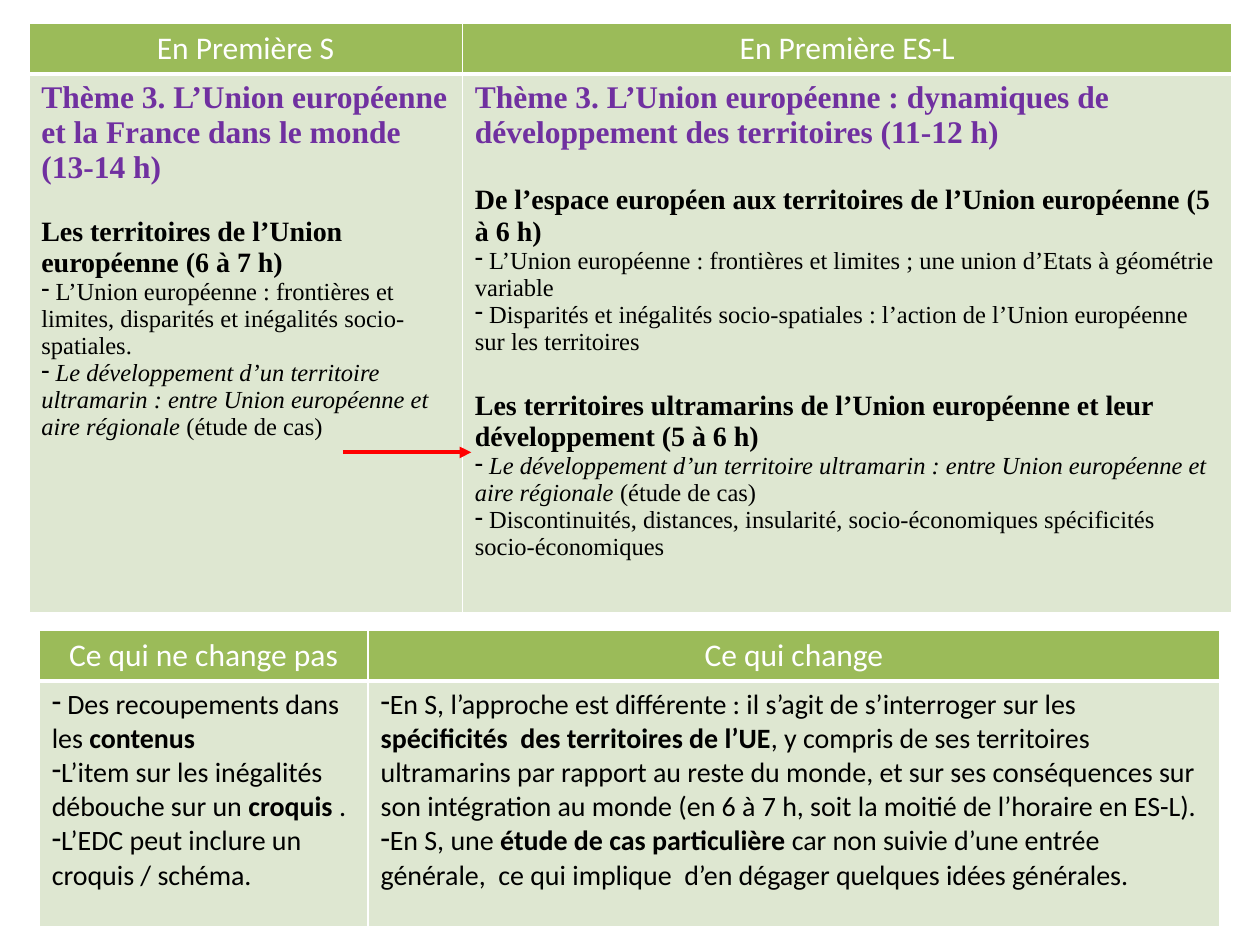
from dataclasses import dataclass

from lxml.etree import SubElement
from pptx import Presentation
from pptx.dml.color import RGBColor
from pptx.enum.shapes import MSO_CONNECTOR as Connector
from pptx.enum.text import PP_ALIGN as Align
from pptx.oxml.ns import qn
from pptx.util import Cm, Pt

SERIF, SANS = "Times New Roman", "Calibri"
WHITE, BLACK, PURPLE, RED = "FFFFFF", "000000", "7030A0", "FF0000"
GREEN, PALE_GREEN = "9BBB59", "DEE7D1"


@dataclass
class Span:
    text: str
    bold: bool = False
    italic: bool = False


@dataclass
class Para:
    spans: list[Span]
    size: int
    font: str = SERIF
    color: str = BLACK
    before: int = 0
    bullet: bool = False
    align: Align = Align.LEFT


@dataclass
class Grid:
    left: float
    top: float
    widths: list[float]
    heights: list[float]
    headers: list[str]
    bodies: list[list[Para]]


def rgb(value: str) -> RGBColor:
    return RGBColor.from_string(value)


def theme(text: str) -> Para:
    return Para([Span(text, bold=True)], 18, color=PURPLE)


def heading(text: str, before: int) -> Para:
    return Para([Span(text, bold=True)], 16, before=before)


def item(*spans: Span) -> Para:
    return Para(list(spans), 14, bullet=True)


def remark(*spans: Span) -> Para:
    return Para(list(spans), 16, font=SANS, bullet=True)


def write(frame, paras: list[Para]) -> None:
    for index, para in enumerate(paras):
        line = frame.add_paragraph() if index else frame.paragraphs[0]
        line.alignment = para.align
        line.space_before = Pt(para.before)
        if para.bullet:
            SubElement(line._p.get_or_add_pPr(), qn("a:buChar"), char="-")
        for span in para.spans:
            run = line.add_run()
            run.text = span.text
            run.font.name, run.font.size = para.font, Pt(para.size)
            run.font.bold, run.font.italic = span.bold, span.italic
            run.font.color.rgb = rgb(para.color)


def add_borders(cell, bottom: int) -> None:
    properties = cell._tc.get_or_add_tcPr()
    for side, width in (("L", 1), ("R", 1), ("T", 1), ("B", bottom)):
        border = SubElement(properties, qn(f"a:ln{side}"), w=str(Pt(width)))
        SubElement(SubElement(border, qn("a:solidFill")), qn("a:srgbClr"), val=WHITE)


def fill_cell(cell, paras: list[Para], fill: str, bottom: int) -> None:
    add_borders(cell, bottom)
    cell.fill.solid()
    cell.fill.fore_color.rgb = rgb(fill)
    write(cell.text_frame, paras)


def draw_grid(slide, grid: Grid) -> None:
    table = slide.shapes.add_table(
        len(grid.heights), len(grid.widths), Cm(grid.left), Cm(grid.top),
        Cm(sum(grid.widths)), Cm(sum(grid.heights))).table
    for column, width in zip(table.columns, grid.widths):
        column.width = Cm(width)
    for row, height in zip(table.rows, grid.heights):
        row.height = Cm(height)
    for index, (header, body) in enumerate(zip(grid.headers, grid.bodies)):
        title = Para([Span(header)], 18, SANS, WHITE, align=Align.CENTER)
        fill_cell(table.cell(0, index), [title], GREEN, bottom=3)
        fill_cell(table.cell(1, index), body, PALE_GREEN, bottom=1)


def draw_arrow(slide, start: float, end: float, y: float) -> None:
    arrow = slide.shapes.add_connector(
        Connector.STRAIGHT, Cm(start), Cm(y), Cm(end), Cm(y))
    arrow.line.color.rgb = rgb(RED)
    arrow.line.width = Pt(2.25)
    SubElement(arrow.line._get_or_add_ln(), qn("a:tailEnd"), type="triangle")
    SubElement(arrow._element.spPr, qn("a:effectLst"))


CASE_STUDY = item(
    Span(" "),
    Span("Le développement d’un territoire ultramarin : entre Union européenne "
         "et aire régionale ", italic=True),
    Span("(étude de cas)"))

PROGRAMMES = Grid(
    0.58, 0.46, [8.74, 15.52], [0.97, 10.87],
    ["En Première S", "En Première ES-L"],
    [[theme("Thème 3. L’Union européenne et la France dans le monde (13-14 h)"),
      heading("Les territoires de l’Union européenne (6 à 7 h)", before=18),
      item(Span(" L’Union européenne : frontières et limites, disparités et "
                "inégalités socio-spatiales.")),
      CASE_STUDY],
     [theme("Thème 3.\u00a0L’Union européenne : dynamiques de développement des "
            "territoires (11-12 h)"),
      heading("De l’espace européen aux territoires de l’Union européenne "
              "(5 à 6 h)", before=20),
      item(Span(" L’Union européenne : frontières et limites ; une union d’Etats "
                "à géométrie variable")),
      item(Span(" Disparités et inégalités socio-spatiales : l’action de l’Union "
                "européenne sur les territoires")),
      heading("Les territoires ultramarins de l’Union européenne et leur "
              "développement (5 à 6 h)", before=20),
      CASE_STUDY,
      item(Span(" Discontinuités, distances, insularité, socio-économiques "
                "spécificités socio-économiques"))]])

CHANGES = Grid(
    0.79, 12.7, [6.63, 17.17], [1.02, 4.95],
    ["Ce qui ne change pas", "Ce qui change"],
    [[remark(Span(" Des recoupements dans les "), Span("contenus", bold=True)),
      remark(Span("L’item sur les inégalités débouche sur un "),
             Span("croquis", bold=True), Span(" .")),
      remark(Span("L’EDC peut inclure un croquis / schéma."))],
     [remark(Span("En S, l’approche est différente : il s’agit de s’interroger "
                  "sur les "),
             Span("spécificités  des territoires de l’UE", bold=True),
             Span(", y compris de ses territoires ultramarins par rapport au "
                  "reste du monde, et sur ses conséquences sur son intégration "
                  "au monde (en 6 à 7 h, soit la moitié de l’horaire en ES-L).")),
      remark(Span("En S, une "), Span("étude de cas particulière", bold=True),
             Span(" car non suivie d’une entrée générale,  ce qui implique  "
                  "d’en dégager quelques idées générales."))]])


def main() -> None:
    deck = Presentation()
    deck.slide_width, deck.slide_height = Cm(25.4), Cm(19.05)
    slide = deck.slides.add_slide(deck.slide_layouts[6])
    for grid in (PROGRAMMES, CHANGES):
        draw_grid(slide, grid)
    draw_arrow(slide, 6.91, 9.5, 9.12)
    deck.save("out.pptx")


if __name__ == "__main__":
    main()
